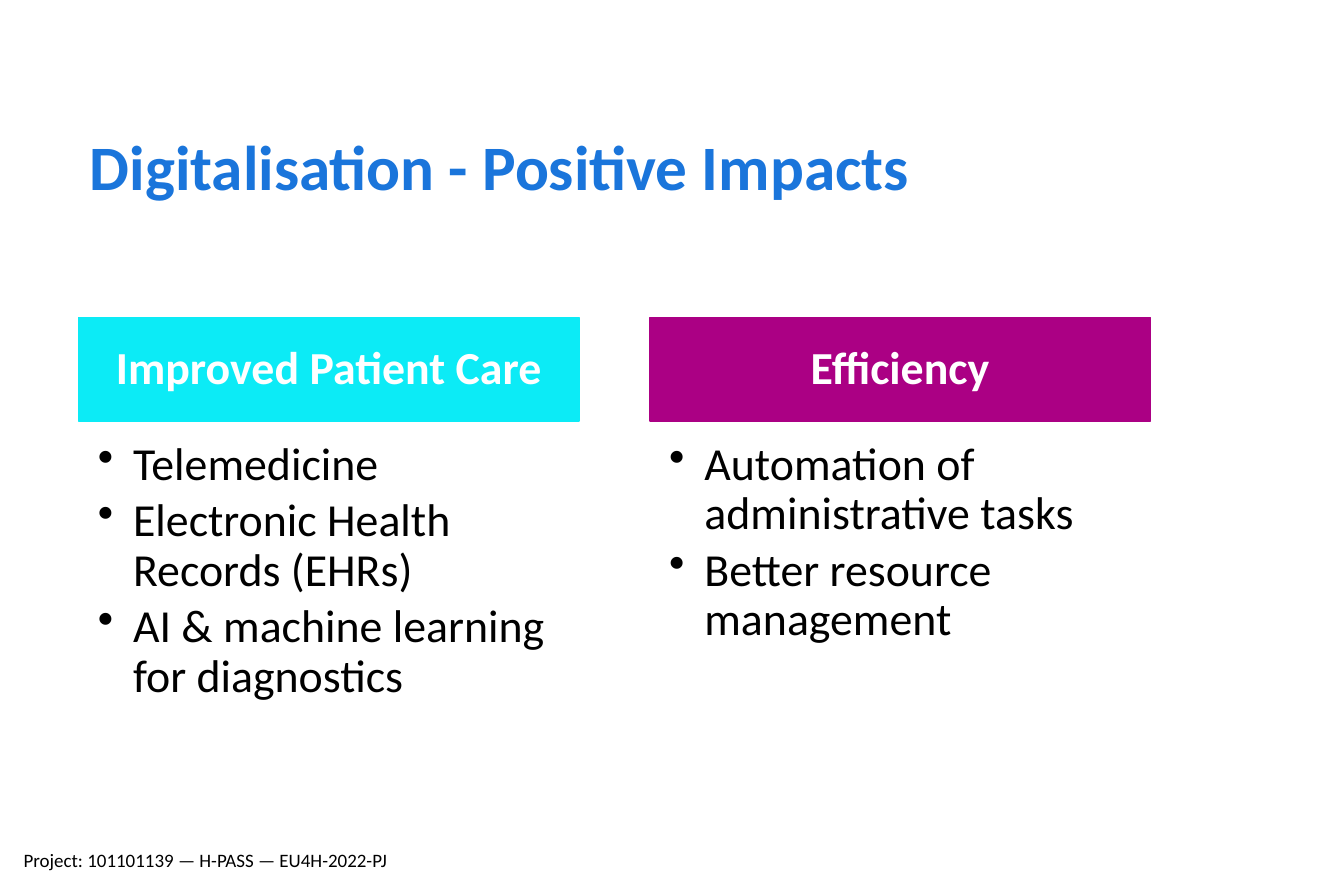
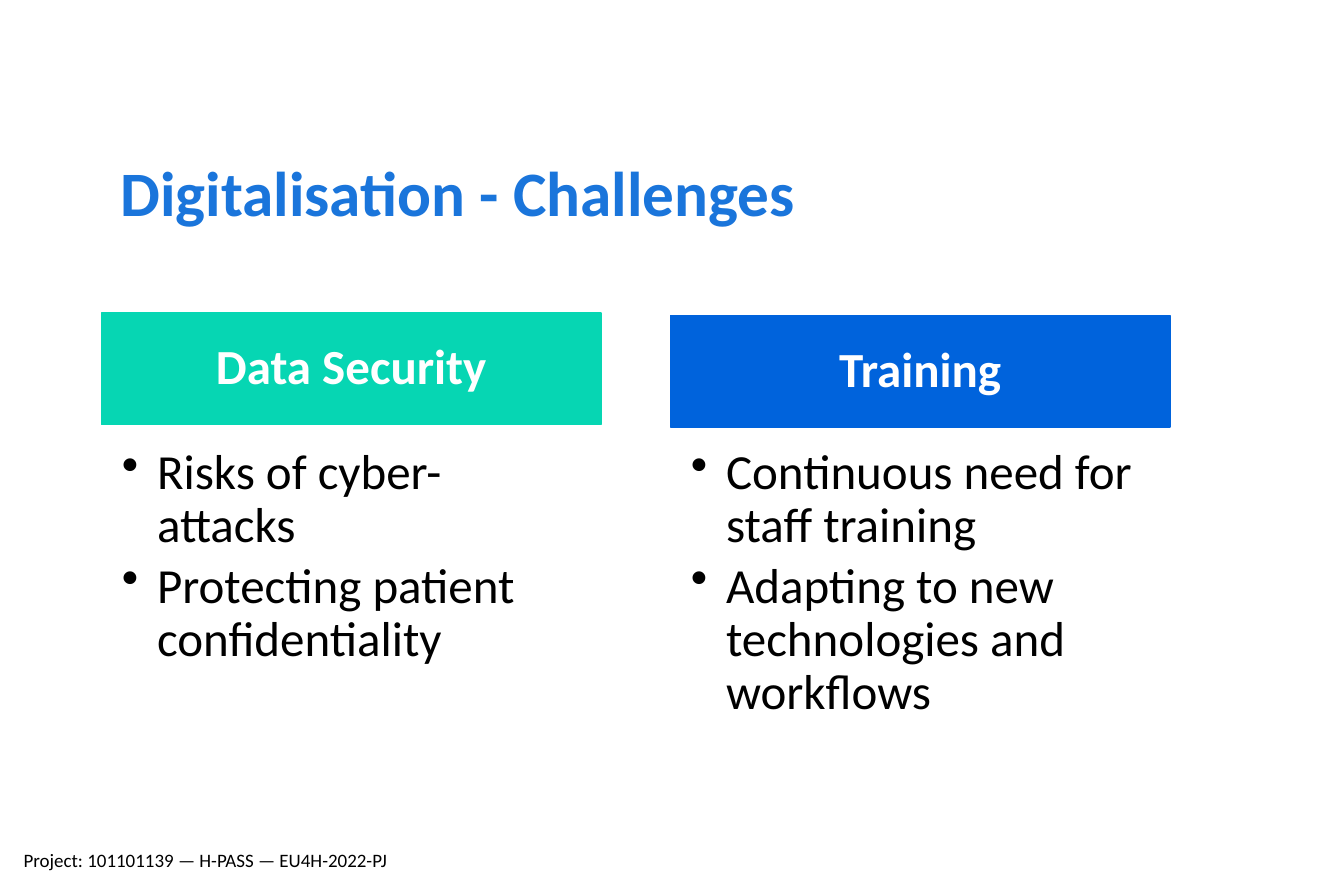
from lxml.etree import SubElement
from pptx import Presentation
from pptx.dml.color import RGBColor
from pptx.enum.shapes import MSO_SHAPE
from pptx.enum.text import MSO_ANCHOR, MSO_AUTO_SIZE, PP_ALIGN
from pptx.oxml.ns import qn
from pptx.util import Inches, Pt

FOOTER = "Project: 101101139 — H-PASS — EU4H-2022-PJ"

SLIDES = [
    {
        "title": ("Digitalisation - Positive Impacts", 0.69, 1.14, 7.7),
        "size": 29,
        "width": 4.4,
        "header_height": 0.91,
        "list_box": (3.7, 2.79),
        "list_insets": (0.17, 0.17, 0.23, 0.25),
        "columns": [
            (0.69, 2.79, "0CEBF6", "Improved Patient Care",
             ["Telemedicine", "Electronic Health Records (EHRs)",
              "AI & machine learning for diagnostics"]),
            (5.71, 2.79, "AB0084", "Efficiency",
             ["Automation of administrative tasks",
              "Better resource management"]),
        ],
    },
    {
        "title": ("Digitalisation - Challenges", 0.96, 1.37, 6.71),
        "size": 31,
        "width": 4.39,
        "header_height": 0.98,
        "list_box": (3.75, 2.93),
        "list_insets": (0.18, 0.18, 0.24, 0.27),
        "columns": [
            (0.89, 2.75, "06D6B3", "Data Security",
             ["Risks of cyber-attacks",
              "Protecting patient confidentiality"]),
            (5.89, 2.77, "0063DC", "Training",
             ["Continuous need for staff training",
              "Adapting to new technologies and workflows"]),
        ],
    },
]


def color(value):
    return RGBColor.from_string(value)


def assign(target, values):
    for name, value in values.items():
        setattr(target, name, value)


class Deck:
    font = "Calibri"
    title_color = "1A75DB"
    text_color = "000000"
    header_color = "FFFFFF"
    default_insets = (0.1, 0.05, 0.1, 0.05)
    indent = 0.31

    def __init__(self, width, height):
        self.presentation = Presentation()
        assign(self.presentation, {"slide_width": Inches(width),
                                   "slide_height": Inches(height)})
        self.slide = None

    def add_slide(self):
        layout = self.presentation.slide_layouts.get_by_name("Title Only")
        self.slide = self.presentation.slides.add_slide(layout)

    def fill_text(self, shape, lines, size, text_color, bold=False,
                  insets=default_insets, anchor=MSO_ANCHOR.TOP, bullet=False,
                  **paragraph_format):
        frame = shape.text_frame
        left, top, right, bottom = map(Inches, insets)
        assign(frame, {"word_wrap": True, "auto_size": MSO_AUTO_SIZE.NONE,
                       "vertical_anchor": anchor, "margin_left": left,
                       "margin_top": top, "margin_right": right,
                       "margin_bottom": bottom})
        frame.text = "\n".join(lines)
        for paragraph in frame.paragraphs:
            if bullet:
                self.add_bullet(paragraph)
            assign(paragraph, paragraph_format)
            assign(paragraph.font, {"name": self.font, "size": Pt(size),
                                    "bold": bold})
            paragraph.font.color.rgb = color(text_color)

    def add_bullet(self, paragraph):
        properties = paragraph._p.get_or_add_pPr()
        properties.set("marL", str(Inches(self.indent)))
        properties.set("indent", str(-Inches(self.indent)))
        SubElement(properties, qn("a:buChar")).set("char", "•")

    def add_title(self, text, left, top, width):
        title = self.slide.shapes.title
        assign(title, {"left": Inches(left), "top": Inches(top),
                       "width": Inches(width), "height": Inches(0.89)})
        self.fill_text(title, [text], 40, self.title_color, bold=True,
                       alignment=PP_ALIGN.JUSTIFY, line_spacing=0.9)

    def add_header(self, text, box, fill, size):
        header = self.slide.shapes.add_shape(MSO_SHAPE.RECTANGLE,
                                             *map(Inches, box))
        header.shadow.inherit = False
        header.fill.solid()
        header.fill.fore_color.rgb = color(fill)
        header.line.color.rgb = color(fill)
        header.line.width = Pt(1)
        self.fill_text(header, [text], size, self.header_color, bold=True,
                       insets=(0.23, 0.13, 0.23, 0.13),
                       anchor=MSO_ANCHOR.MIDDLE,
                       alignment=PP_ALIGN.CENTER, line_spacing=0.9)

    def add_text(self, lines, box, size, **options):
        text_box = self.slide.shapes.add_textbox(*map(Inches, box))
        self.fill_text(text_box, lines, size, self.text_color, **options)

    def add_list(self, lines, box, size, insets):
        self.add_text(lines, box, size, insets=insets, bullet=True,
                      line_spacing=0.9, space_after=Pt(size * 0.15))

    def add_footer(self):
        self.add_text([FOOTER], (0.11, 7.4, 3.63, 0.27), 12)


def main():
    deck = Deck(11.81, 7.87)
    for content in SLIDES:
        deck.add_slide()
        deck.add_title(*content["title"])
        size, width = content["size"], content["width"]
        list_top, list_height = content["list_box"]
        for left, top, fill, heading, points in content["columns"]:
            deck.add_header(heading, (left, top, width,
                                      content["header_height"]), fill, size)
            deck.add_list(points, (left, list_top, width, list_height), size,
                          content["list_insets"])
        deck.add_footer()
    deck.presentation.save("out.pptx")


if __name__ == "__main__":
    main()
